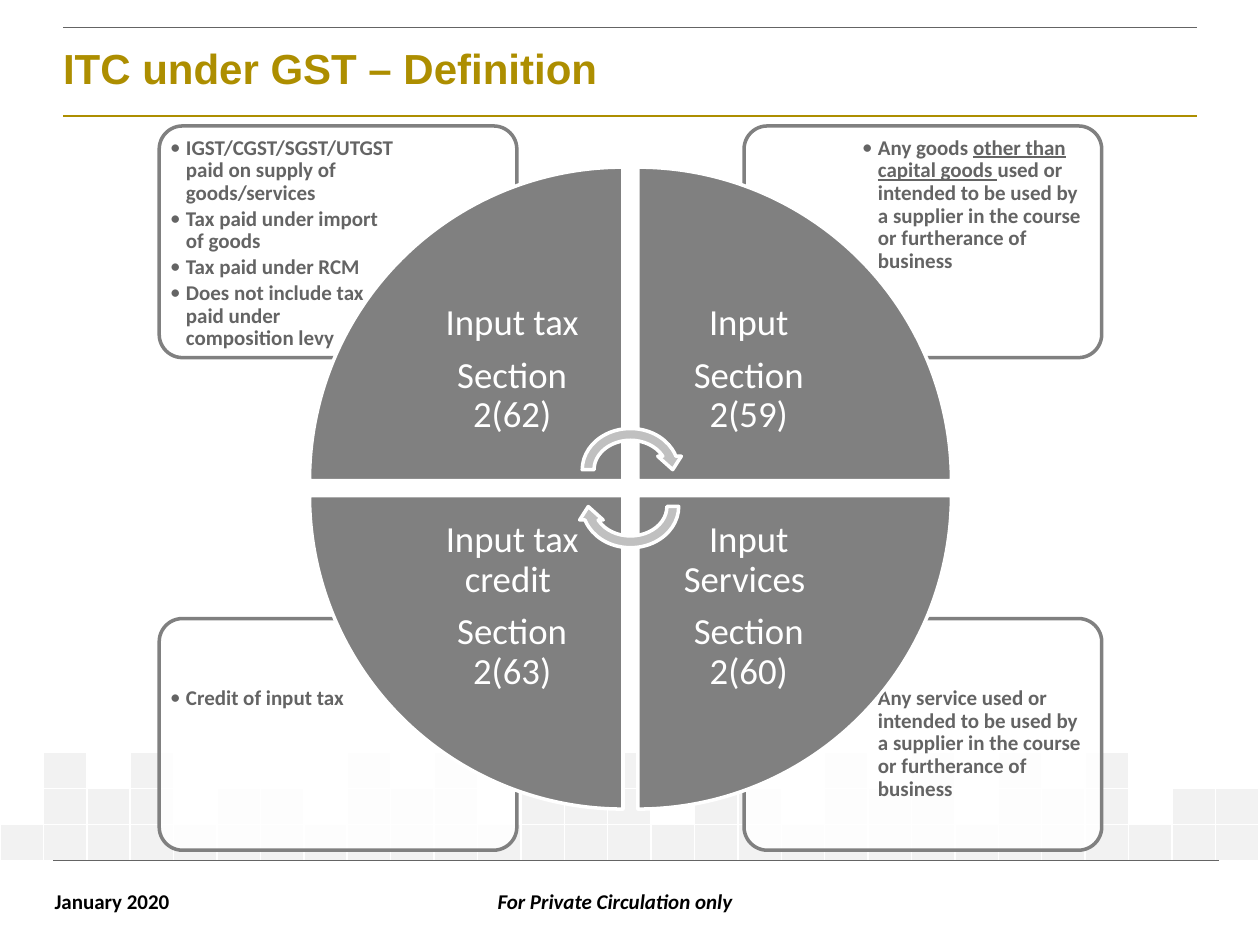
from dataclasses import dataclass
from itertools import product

from lxml.etree import SubElement
from pptx import Presentation
from pptx.dml.color import RGBColor as RGB
from pptx.enum.shapes import MSO_CONNECTOR as CONN, MSO_SHAPE as SHAPE
from pptx.enum.text import MSO_ANCHOR as ANCHOR, MSO_AUTO_SIZE as FIT, PP_ALIGN as ALIGN
from pptx.oxml.ns import qn
from pptx.util import Cm, Pt


@dataclass(frozen=True)
class Theme:
    gold: str = "AD8E00"
    text: str = "646464"
    wedge: str = "808080"
    arrow: str = "C0C0C0"
    tile: str = "F2F2F2"
    white: str = "FFFFFF"
    black: str = "000000"
    head: str = "Arial"
    body: str = "Calibri"
    title_pt: int = 24
    label_pt: int = 21
    note_pt: int = 12


T = Theme()
TILES = (
    ".#.#....#.#.#.#....#.#.#.#...",
    ".###.##.###.###.##.###.###.##",
    "#" * 29,
)
QUADRANTS = {
    (0, 0): (["Input tax", "Section 2(62)"], 0, [
        ["IGST/CGST/SGST/UTGST paid on supply of goods/services"],
        ["Tax paid under import of goods"],
        ["Tax paid under RCM"],
        ["Does not include tax paid under\ncomposition levy"],
    ]),
    (1, 0): (["Input", "Section 2(59)"], 90, [[
        "Any goods ", "other than capital goods ",
        "used or intended to be used by a supplier in the course or furtherance of business",
    ]]),
    (1, 1): (["Input Services ", "Section 2(60)"], 180, [[
        "Any service used or intended to be used by a supplier in the course or furtherance of business",
    ]]),
    (0, 1): (["Input tax credit ", "Section 2(63)"], 270, [["Credit of input tax"]]),
}


def assign(obj, values):
    for name, value in values.items():
        setattr(obj, name, value)


def set_font(font, color, **values):
    assign(font, values)
    font.color.rgb = RGB.from_string(color)


def set_frame(tf, inset, anchor=ANCHOR.TOP, wrap=True):
    sides = ("margin_left", "margin_top", "margin_right", "margin_bottom")
    assign(tf, dict(zip(sides, map(Cm, inset))))
    assign(tf, {"word_wrap": wrap, "auto_size": FIT.NONE, "vertical_anchor": anchor})


def add_bullet(p):
    pPr = p._p.get_or_add_pPr()
    pPr.set("marL", str(Cm(0.32)))
    pPr.set("indent", str(Cm(-0.32)))
    SubElement(pPr, qn("a:buFont"), typeface=T.body)
    SubElement(pPr, qn("a:buChar"), char="•")


def add_break(p, size):
    p.add_line_break()
    SubElement(p._p[-1], qn("a:rPr"), sz=str(int(size.pt * 100)))


def add_text(s, box, paras, inset, color, size, anchor=ANCHOR.TOP, wrap=True,
             bullet=False, fmt=None, **font):
    tf = s.shapes.add_textbox(*map(Cm, box)).text_frame
    set_frame(tf, inset, anchor, wrap)
    for i, runs in enumerate(paras):
        p = tf.add_paragraph() if i else tf.paragraphs[0]
        if bullet:
            add_bullet(p)
        assign(p, fmt or {})
        for j, words in enumerate(runs):
            for k, line in enumerate(words.split("\n")):
                if k:
                    add_break(p, size)
                r = p.add_run()
                r.text = line
                set_font(r.font, color, name=T.body, size=size, **font)
                if j % 2:
                    r.font.underline = True


def add_shape(s, kind, box, fill, line, rotation=0):
    sp = s.shapes.add_shape(kind, *map(Cm, box))
    sp.shadow.inherit = False
    sp.rotation = rotation
    sp.fill.solid()
    sp.fill.fore_color.rgb = RGB.from_string(fill)
    sp.line.color.rgb = RGB.from_string(line)
    sp.line.width = Pt(2)
    return sp


def add_rule(s, x, y, width, color, weight):
    ln = s.shapes.add_connector(CONN.STRAIGHT, Cm(x), Cm(y), Cm(x + width), Cm(y))
    ln.line.color.rgb = RGB.from_string(color)
    ln.line.width = Pt(weight)
    SubElement(ln._element.spPr, qn("a:effectLst"))


def add_tiles(s, x, y, w, h):
    rows, cols = len(TILES), len(TILES[0])
    table = s.shapes.add_table(rows, cols, Cm(x), Cm(y), Cm(w), Cm(h)).table
    assign(table, {"first_row": False, "horz_banding": False})
    for col in table.columns:
        col.width = Cm(w / cols)
    for row in table.rows:
        row.height = Cm(h / rows)
    for i, j in product(range(rows), range(cols)):
        cell = table.cell(i, j)
        assign(cell, dict.fromkeys(
            ("margin_left", "margin_right", "margin_top", "margin_bottom"), 0))
        cell.text_frame.paragraphs[0]._p.get_or_add_endParaRPr().set("sz", "800")
        tcPr = cell._tc.get_or_add_tcPr()
        for side in ("lnL", "lnR", "lnT", "lnB"):
            ln = SubElement(tcPr, qn(f"a:{side}"), w=str(Pt(1)))
            SubElement(SubElement(ln, qn("a:solidFill")), qn("a:srgbClr"), val=T.white)
        if TILES[i][j] == "#":
            cell.fill.solid()
            cell.fill.fore_color.rgb = RGB.from_string(T.tile)
        else:
            cell.fill.background()


def add_header(s, x, y, w, h):
    add_rule(s, x, y, w, T.text, 0.5)
    add_rule(s, x, y + h, w, T.gold, 1.5)
    title = s.shapes.title
    assign(title, dict(zip(("left", "top", "width", "height"), map(Cm, (x, y, w, 1.68)))))
    set_frame(title.text_frame, (0, 0.1, 0, 0), ANCHOR.MIDDLE)
    p = title.text_frame.paragraphs[0]
    assign(p, {"alignment": ALIGN.LEFT, "line_spacing": 0.85})
    r = p.add_run()
    r.text = "ITC under GST – Definition"
    set_font(r.font, T.gold, name=T.head, size=Pt(T.title_pt), bold=True)


def add_footer(s, x, y, w):
    inset = (0.25, 0.13, 0.25, 0.13)
    font = {"size": Pt(T.note_pt), "bold": True}
    add_rule(s, x, y, w, T.text, 0.25)
    add_text(s, (x - 0.22, y + 0.43, 2.87, 0.77), [["January 2020"]], inset,
             T.black, wrap=False, **font)
    add_text(s, (x + 5.08, y + 0.43, 12.5, 0.77), [["For Private Circulation only"]],
             inset, T.black, fmt={"alignment": ALIGN.CENTER}, italic=True, **font)


def add_card(s, x, y, w, h, col, row, notes):
    sp = add_shape(s, SHAPE.ROUNDED_RECTANGLE, (x, y, w, h), T.white, T.wedge)
    sp.adjustments[0] = 0.1
    SubElement(sp._element.spPr.find(".//" + qn("a:srgbClr")), qn("a:alpha"), val="90000")
    tw, th, pad = 4.85, 3.3, 0.1
    left = x + (w - tw - pad if col else pad)
    top = y + (h - th - pad if row else pad)
    add_text(s, (left, top, tw, th), notes, (0.12,) * 4, T.text, Pt(T.note_pt),
             bullet=True, fmt={"line_spacing": 0.9, "space_after": Pt(1.8)}, bold=True)


def add_wedge(s, x, y, size, col, row, rotation, lines):
    add_shape(s, SHAPE.PIE_WEDGE, (x, y, size, size), T.wedge, T.white, rotation)
    side = 4.47
    left, top = x + (1 - col) * (size - side), y + (1 - row) * (size - side)
    add_text(s, (left, top, side, side), [[line] for line in lines], (0.41,) * 4,
             T.white, Pt(T.label_pt), anchor=ANCHOR.MIDDLE,
             fmt={"alignment": ALIGN.CENTER, "line_spacing": 0.9, "space_after": Pt(7.35)})


def add_cycle(s, x, y, w, h):
    cw, ch, size, gap = 7.21, 4.67, 6.32, 0.3
    mid_x, mid_y = x + w / 2, y + h / 2
    for (col, row), (_, _, notes) in reversed(QUADRANTS.items()):
        add_card(s, x + col * (w - cw), y + row * (h - ch), cw, ch, col, row, notes)
    start, pitch = -size - gap / 2, size + gap
    for (col, row), (lines, rotation, _) in QUADRANTS.items():
        add_wedge(s, mid_x + start + col * pitch, mid_y + start + row * pitch,
                  size, col, row, rotation, lines)
    aw, ah, reach = 2.18, 1.9, 1.32
    for top, rotation in ((mid_y - reach, 0), (mid_y + reach - ah, 180)):
        add_shape(s, SHAPE.CIRCULAR_ARROW, (mid_x - aw / 2, top, aw, ah),
                  T.arrow, T.white, rotation)


def main():
    prs = Presentation()
    assign(prs, {"slide_width": Cm(25.4), "slide_height": Cm(19.05)})
    s = prs.slides.add_slide(prs.slide_layouts[5])
    add_tiles(s, 0, 15.16, 25.4, 2.2)
    add_header(s, 1.27, 0.56, 22.86, 1.78)
    add_footer(s, 1.07, 17.35, 23.5)
    add_cycle(s, 3.21, 2.54, 19, 14.6)
    prs.save("out.pptx")


if __name__ == "__main__":
    main()
